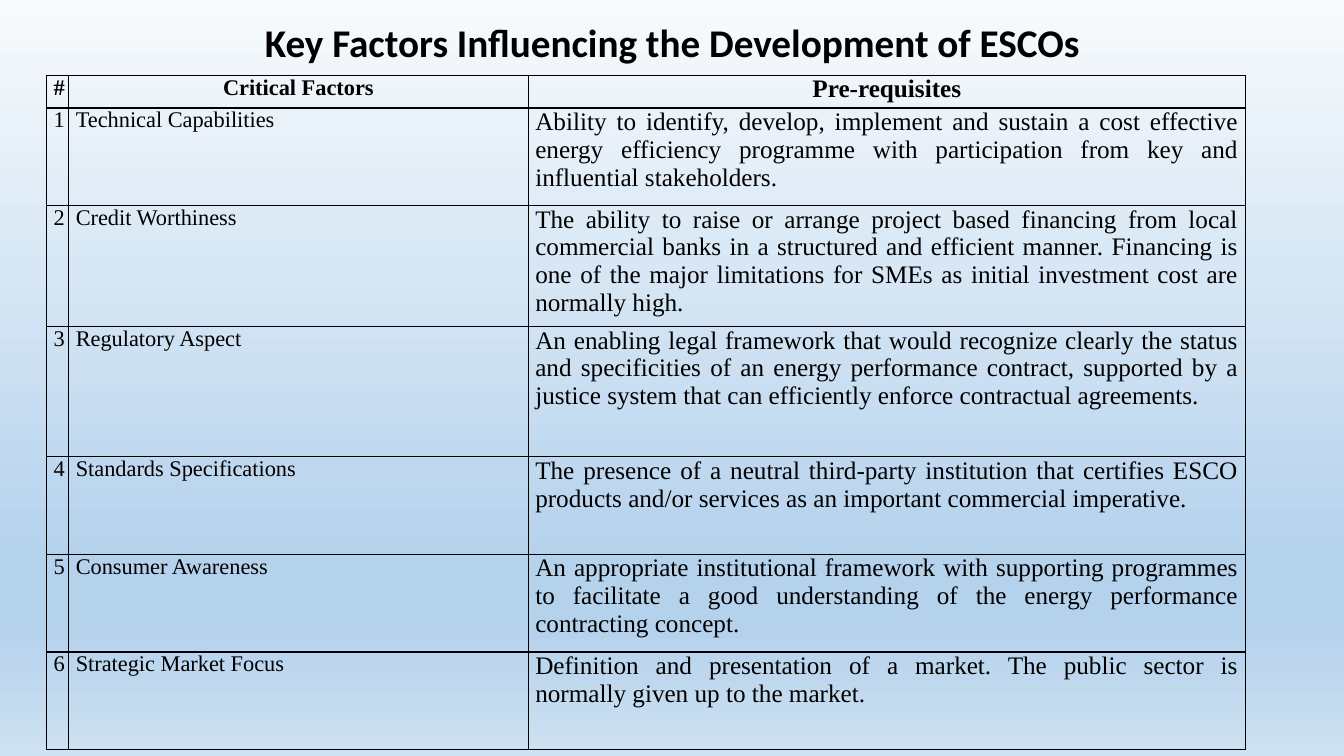
from typing import NamedTuple

from lxml.etree import SubElement
from pptx import Presentation
from pptx.dml.color import RGBColor
from pptx.enum.text import MSO_ANCHOR, MSO_AUTO_SIZE, PP_ALIGN
from pptx.oxml.ns import qn
from pptx.slide import Slide
from pptx.table import _Cell
from pptx.text.text import TextFrame
from pptx.util import Cm, Pt

BLACK = "000000"
TABLE_FONT = "Times New Roman"
NO_STYLE = "{2D5ABB26-0587-4C30-8999-92F81FD0307C}"
COLUMN_WIDTHS = (0.56, 11.58, 18.08)
COLUMN_SIZES = (16, 16, 18)
HEADINGS = ("#", "Critical Factors", "Pre-requisites")
HEADING_HEIGHT = 0.82


class Factor(NamedTuple):
    name: str
    prerequisite: str
    height: float = 2.46


class GradientStop(NamedTuple):
    percent: int
    color: str


FACTORS = (
    Factor("Technical Capabilities",
           "Ability to identify, develop, implement and sustain a cost effective energy "
           "efficiency programme with participation from key and influential stakeholders."),
    Factor("Credit Worthiness",
           "The ability to raise or arrange project based financing from local commercial "
           "banks in a structured and efficient manner. Financing is one of the major "
           "limitations for SMEs as initial investment cost are normally high.", 2.95),
    Factor("Regulatory Aspect",
           "An enabling legal framework that would recognize clearly the status and "
           "specificities of an energy performance contract, supported by a justice system "
           "that can efficiently enforce contractual agreements.", 3.28),
    Factor("Standards Specifications",
           "The presence of a neutral third-party institution that certifies ESCO products "
           "and/or services as an important commercial imperative."),
    Factor("Consumer Awareness",
           "An appropriate institutional framework with supporting programmes to facilitate "
           "a good understanding of the energy performance contracting concept."),
    Factor("Strategic Market Focus",
           "Definition and presentation of a market. The public sector is normally given "
           "up to the market."),
)

BACKGROUND_STOPS = (
    GradientStop(0, "F7FAFD"),
    GradientStop(74, "B5D2EC"),
    GradientStop(83, "B5D2EC"),
    GradientStop(100, "CEE1F2"),
)


def hex_color(value: str) -> RGBColor:
    return RGBColor.from_string(value)


def write_text(frame: TextFrame, text: str, font: str, size: float,
               bold: bool, alignment: PP_ALIGN) -> None:
    frame.text = text
    para = frame.paragraphs[0]
    para.alignment = alignment
    for span in para.runs:
        span.font.name = font
        span.font.size = Pt(size)
        span.font.bold = bold
        span.font.color.rgb = hex_color(BLACK)


def paint_background(page: Slide, stops: tuple[GradientStop, ...]) -> None:
    fill = page.background.fill
    fill.gradient()
    fill.gradient_angle = 270
    stop_list = next(page.element.iter(qn("a:gsLst")))
    for old_stop in list(stop_list):
        stop_list.remove(old_stop)
    for stop in stops:
        node = SubElement(stop_list, qn("a:gs"), pos=str(stop.percent * 1000))
        SubElement(node, qn("a:srgbClr"), val=stop.color)


def draw_borders(cell: _Cell) -> None:
    properties = cell._tc.get_or_add_tcPr()
    for side in ("lnL", "lnR", "lnT", "lnB"):
        line = SubElement(properties, qn(f"a:{side}"), w=str(Pt(1)))
        fill = SubElement(line, qn("a:solidFill"))
        SubElement(fill, qn("a:srgbClr"), val=BLACK)


def format_cell(cell: _Cell, text: str, size: float, bold: bool,
                alignment: PP_ALIGN) -> None:
    cell.margin_left = cell.margin_right = Cm(0.18)
    cell.margin_top = cell.margin_bottom = 0
    cell.vertical_anchor = MSO_ANCHOR.TOP
    draw_borders(cell)
    cell.fill.background()
    write_text(cell.text_frame, text, TABLE_FONT, size, bold, alignment)


def add_title(page: Slide, text: str) -> None:
    title = page.shapes.title
    title.left, title.top, title.width, title.height = Cm(4.24), Cm(0.33), Cm(25.4), Cm(1.45)
    frame = title.text_frame
    frame.word_wrap = True
    frame.auto_size = MSO_AUTO_SIZE.SHAPE_TO_FIT_TEXT
    frame.vertical_anchor = MSO_ANCHOR.TOP
    write_text(frame, text, "Calibri", 28, True, PP_ALIGN.CENTER)


def add_factor_table(page: Slide, factors: tuple[Factor, ...]) -> None:
    heights = [HEADING_HEIGHT] + [factor.height for factor in factors]
    rows = [HEADINGS] + [(str(number), factor.name, factor.prerequisite)
                         for number, factor in enumerate(factors, 1)]
    frame = page.shapes.add_table(len(rows), len(HEADINGS), Cm(1.17), Cm(1.9),
                                  Cm(sum(COLUMN_WIDTHS)), Cm(sum(heights)))
    table = frame.table
    table.first_row = table.horz_banding = False
    next(frame.element.iter(qn("a:tableStyleId"))).text = NO_STYLE
    for column, width in zip(table.columns, COLUMN_WIDTHS):
        column.width = Cm(width)
    for row_index, (texts, height) in enumerate(zip(rows, heights)):
        table.rows[row_index].height = Cm(height)
        heading = row_index == 0
        for column_index, text in enumerate(texts):
            centered = heading or column_index == 0
            format_cell(table.cell(row_index, column_index), text,
                        COLUMN_SIZES[column_index], heading,
                        PP_ALIGN.CENTER if centered else PP_ALIGN.JUSTIFY)


def main() -> None:
    # Deck and page
    deck = Presentation()
    deck.slide_width, deck.slide_height = Cm(33.87), Cm(19.05)
    page = deck.slides.add_slide(deck.slide_layouts.get_by_name("Title Only"))
    paint_background(page, BACKGROUND_STOPS)

    # Content
    add_title(page, "Key Factors Influencing the Development of ESCOs")
    add_factor_table(page, FACTORS)

    deck.save("out.pptx")


if __name__ == "__main__":
    main()
